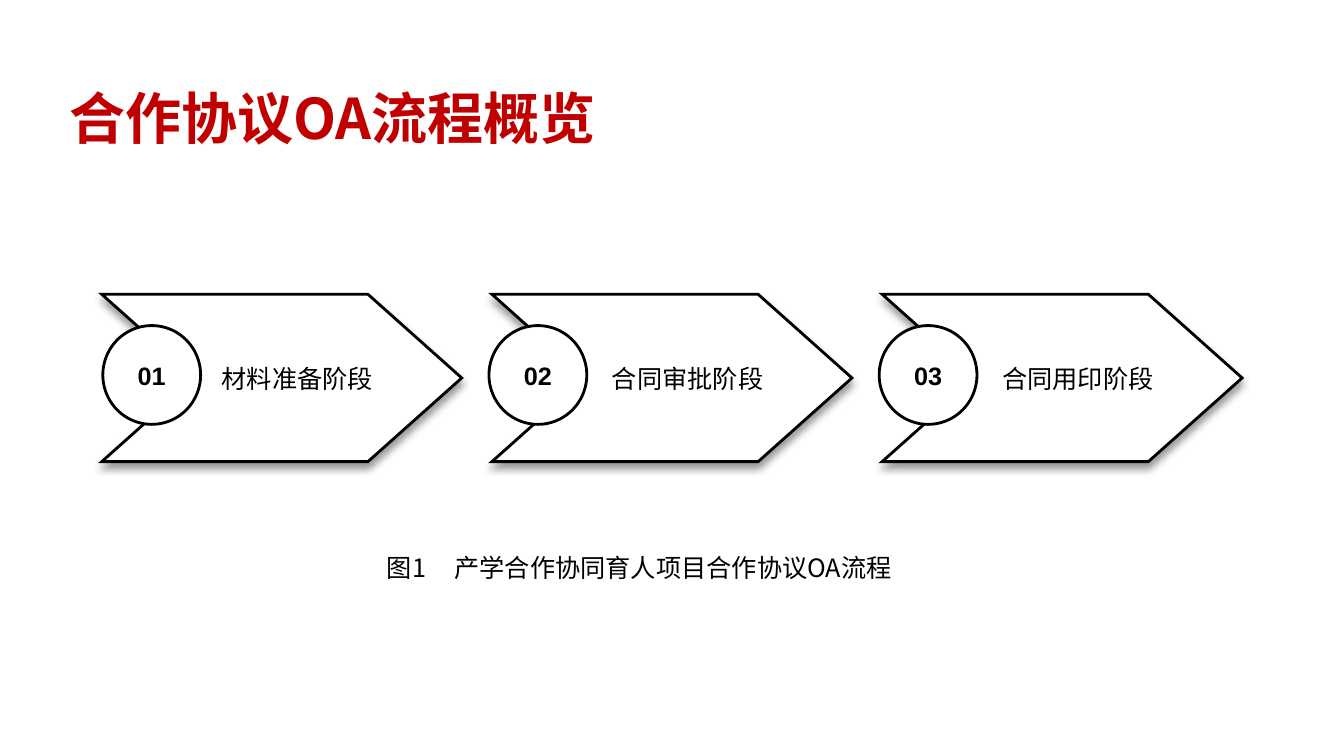
from lxml import etree
from pptx import Presentation
from pptx.dml.color import RGBColor
from pptx.enum.shapes import MSO_SHAPE
from pptx.enum.text import MSO_ANCHOR, MSO_AUTO_SIZE, PP_ALIGN
from pptx.oxml import parse_xml
from pptx.oxml.ns import qn
from pptx.util import Inches, Pt

OVAL = MSO_SHAPE.OVAL
MIDDLE = MSO_ANCHOR.MIDDLE
GROW = MSO_AUTO_SIZE.SHAPE_TO_FIT_TEXT
CENTER = PP_ALIGN.CENTER

TITLE = "合作协议OA流程概览"
CAPTION = "图1\t产学合作协同育人项目合作协议OA流程"
STEPS = [
    ("01", "材料准备阶段", 0.01),
    ("02", "合同审批阶段", -0.03),
    ("03", "合同用印阶段", -0.03),
]

CHINESE_FONT = "Noto Sans CJK SC"
NUMBER_FONT = "Arial"
RED, BLACK, WHITE = "C00000", "000000", "FFFFFF"

SLIDE_WIDTH, SLIDE_HEIGHT = 13.33, 7.5
FIRST_LEFT, ARROW_TOP, PITCH = 1.01, 2.92, 3.87
ARROW_WIDTH, ARROW_HEIGHT, NOTCH = 3.57, 1.66, 0.93
CIRCLE_TOP, CIRCLE_WIDTH, CIRCLE_HEIGHT = 3.23, 0.97, 0.98
CAPTION_TAB = 0.67

DRAWING = "http://schemas.openxmlformats.org/drawingml/2006/main"
SHADOW = (
    f'<a:effectLst xmlns:a="{DRAWING}">'
    f'<a:outerShdw blurRad="{Pt(6)}" dist="{Pt(4)}" dir="5400000" algn="t" rotWithShape="0">'
    f'<a:srgbClr val="{BLACK}"><a:alpha val="40000"/></a:srgbClr>'
    "</a:outerShdw></a:effectLst>"
)


def color(value):
    return RGBColor.from_string(value)


def style_text(para, size, font, text_color, bold=False):
    for span in para.runs:
        span.font.size = Pt(size)
        span.font.name = font
        span.font.bold = bold
        span.font.color.rgb = color(text_color)
        east_asian = etree.SubElement(span.font._element, qn("a:ea"))
        east_asian.set("typeface", font)


def add_text(page, text, left, top, width, height, size, text_color, bold=False, tab=None):
    box = page.shapes.add_textbox(Inches(left), Inches(top), Inches(width), Inches(height))
    frame = box.text_frame
    frame.word_wrap = True
    frame.auto_size = GROW
    para = frame.paragraphs[0]
    para.text = text
    if tab:
        stops = etree.SubElement(para._p.get_or_add_pPr(), qn("a:tabLst"))
        etree.SubElement(stops, qn("a:tab"), pos=str(Inches(tab)), algn="l")
    style_text(para, size, CHINESE_FONT, text_color, bold)


def style_shape(shape, text, font, bold=False, left_inset=0, right_inset=0):
    shape.shadow.inherit = False
    shape.fill.solid()
    shape.fill.fore_color.rgb = color(WHITE)
    shape.line.color.rgb = color(BLACK)
    shape.line.width = Pt(2)
    etree.SubElement(shape.line._get_or_add_ln(), qn("a:miter"), lim="800000")
    frame = shape.text_frame
    frame.word_wrap = True
    frame.vertical_anchor = MIDDLE
    frame.margin_left, frame.margin_right = Inches(left_inset), Inches(right_inset)
    frame.margin_top = frame.margin_bottom = 0
    para = frame.paragraphs[0]
    para.text = text
    para.alignment = CENTER
    style_text(para, 18, font, BLACK, bold)


def add_arrow(group, left, label):
    right, bottom = left + ARROW_WIDTH, ARROW_TOP + ARROW_HEIGHT
    middle = ARROW_TOP + ARROW_HEIGHT / 2
    outline = [
        (right - NOTCH, ARROW_TOP),
        (right, middle),
        (right - NOTCH, bottom),
        (left, bottom),
        (left + NOTCH, middle),
    ]
    builder = group.shapes.build_freeform(Inches(left), Inches(ARROW_TOP))
    builder.add_line_segments([(Inches(x), Inches(y)) for x, y in outline], close=True)
    arrow = builder.convert_to_shape()
    style_shape(arrow, label, CHINESE_FONT, left_inset=0.59, right_inset=0.28)
    properties = arrow._element.spPr
    properties.replace(properties.find(qn("a:effectLst")), parse_xml(SHADOW))


def add_step(page, left, number, label, circle_shift):
    group = page.shapes.add_group_shape()
    add_arrow(group, left, label)
    circle = group.shapes.add_shape(
        OVAL, Inches(left + circle_shift), Inches(CIRCLE_TOP),
        Inches(CIRCLE_WIDTH), Inches(CIRCLE_HEIGHT),
    )
    style_shape(circle, number, NUMBER_FONT, bold=True)


def main():
    deck = Presentation()
    deck.slide_width, deck.slide_height = Inches(SLIDE_WIDTH), Inches(SLIDE_HEIGHT)
    page = deck.slides.add_slide(deck.slide_layouts[6])
    add_text(page, TITLE, 0.59, 0.78, 5.73, 0.77, 40, RED, bold=True)
    for index, step in enumerate(STEPS):
        add_step(page, FIRST_LEFT + index * PITCH, *step)
    add_text(page, CAPTION, 3.74, 5.43, 5.36, 0.4, 18, BLACK, tab=CAPTION_TAB)
    deck.save("out.pptx")


if __name__ == "__main__":
    main()
